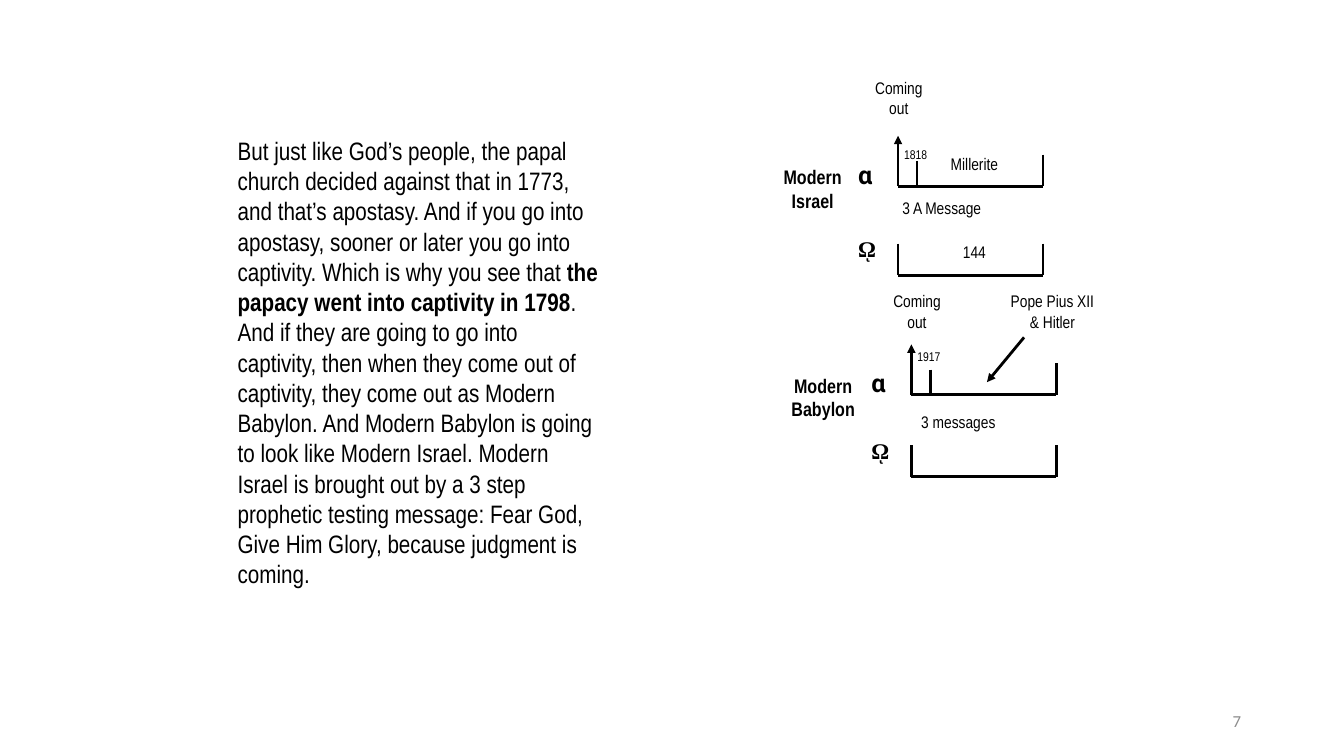
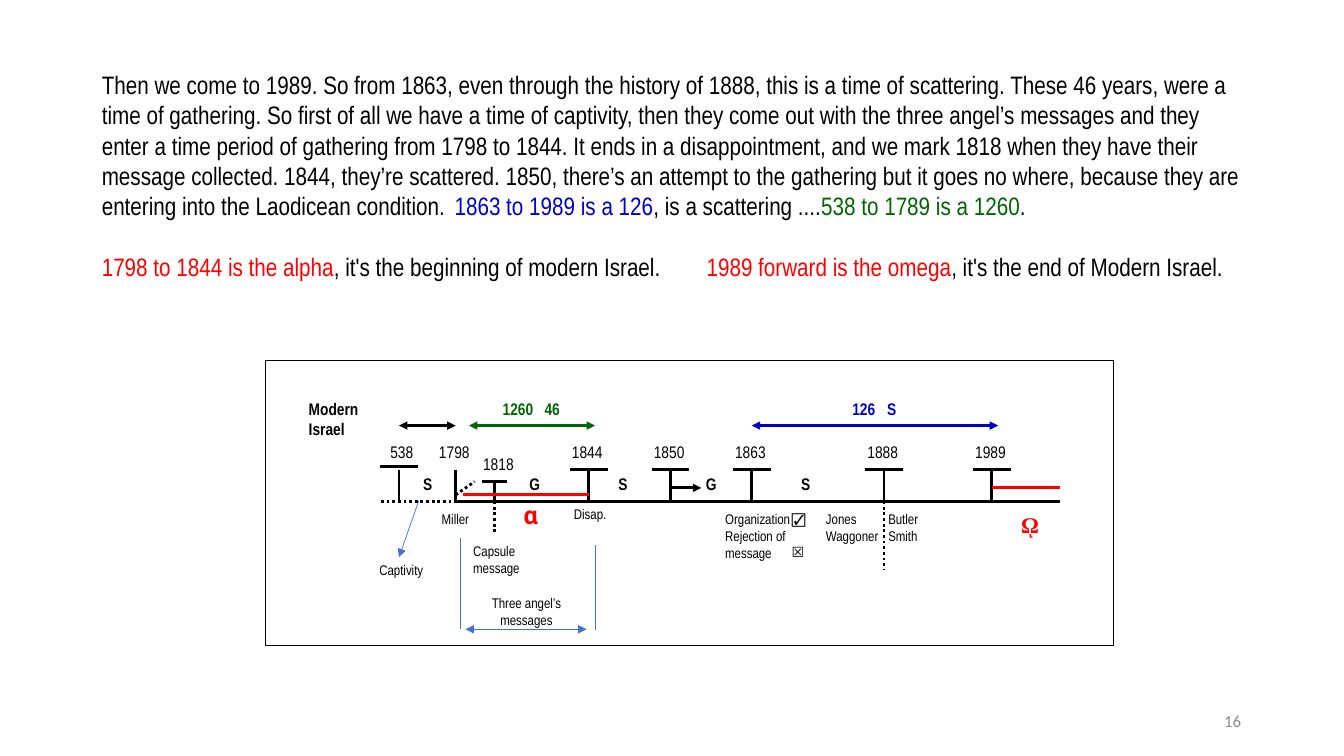
"""Build two slides on the time lines of Modern Israel and Modern Babylon."""
from typing import Any, NamedTuple

import lxml.etree
import pptx
import pptx.dml.color
import pptx.enum.dml
import pptx.enum.shapes
import pptx.enum.text
import pptx.oxml.ns
import pptx.slide
import pptx.util

Pt = pptx.util.Pt
qn = pptx.oxml.ns.qn
ALIGN = pptx.enum.text.PP_ALIGN
INK = {
    "black": "000000",
    "gray": "8C8C8C",
    "red": "FF0000",
    "green": "006600",
    "blue": "0000CC",
    "steel": "4472C4",
}
NARROW = "Arial Narrow"
ALPHA = {"size": 18, "bold": True, "font": "Roboto"}
OMEGA = {"size": 16, "bold": True, "font": "Times New Roman"}
SMALL = {"size": 10}
BASE = 358
TOP = 335.5


class Label(NamedTuple):
    text: str
    x: float
    y: float
    width: float
    align: Any = ALIGN.LEFT
    look: dict[str, Any] = {}
    height: float = 22.5


class Rule(NamedTuple):
    x1: float
    y1: float
    x2: float
    y2: float
    ink: str = "black"
    weight: float = 2
    dots: bool = False
    head: bool = False
    tail: bool = False


class Story(NamedTuple):
    name: str
    mid: float
    x: float
    base: float
    low: float
    year: str
    rise: float


class Post(NamedTuple):
    year: str
    x: float
    half: float = 13.5
    top: float = TOP
    lift: float = 0
    shift: float = -1


class Span(NamedTuple):
    start: float
    end: float
    ink: str
    words: tuple[tuple[str, float], ...] = ()


STORIES = (
    Story("Modern\nIsrael", 580.5, 641.5, 133, 196.5, "1818", 31),
    Story("Modern\nBabylon", 588, 651, 282, 340.5, "1917", 36),
)
NOTES = (
    Label("Millerite", 669, 106.5, 54, ALIGN.CENTER),
    Label("144", 669, 169.5, 54, ALIGN.CENTER),
    Label("Coming out", 615, 52.5, 54, ALIGN.CENTER, height=40),
    Label("Coming out", 628, 205, 54, ALIGN.CENTER, height=40),
    Label("Pope Pius XII\n& Hitler", 718, 205, 67.5, ALIGN.CENTER, height=36),
    Label("3 A Message", 641.5, 138.5, 99),
    Label("3 messages", 655, 291, 99),
)
POSTS = (
    Post("538", 285, lift=2, shift=2),
    Post("1798", 325.5, half=0),
    Post("1818", 353, half=9, top=344, shift=3),
    Post("1844", 420.5),
    Post("1850", 479),
    Post("1863", 537),
    Post("1888", 631.5),
    Post("1989", 708.5),
)
SPANS = (
    Span(285, 325.5, "black"),
    Span(335, 425, "green", (("1260", 370), ("46", 394.5))),
    Span(537, 713, "blue", (("126", 617), ("S", 637))),
)
STATES = (("S", 305.5), ("G", 382), ("S", 445), ("G", 508), ("S", 575.5))
RULES = (
    Rule(325.5, BASE, 757.5, BASE),
    Rule(330.5, BASE, 271.5, BASE, dots=True),
    Rule(325.5, 353.5, 339, 344, dots=True),
    Rule(353, BASE, 353, 380, dots=True),
    Rule(631.5, BASE, 631.5, 407.5, dots=True),
    Rule(479, 348.5, 501, 348.5, tail=True),
    Rule(330.5, 353.5, 420.5, 353.5, "red"),
    Rule(708.5, 348.5, 757.5, 348.5, "red"),
    Rule(299, BASE, 285, 398, "steel", 0.5, tail=True),
    Rule(328.5, 384.5, 328.5, 449.5, "steel", 0.5),
    Rule(425, 389.5, 425, 450, "steel", 0.5),
    Rule(332.5, 449.5, 419, 449.5, "steel", 0.5, head=True, tail=True),
)
EVENTS = (
    Label("Modern\nIsrael", 217.5, 281.5, 46, look={"bold": True}, height=34),
    Label("Miller", 312.5, 362, 32, look=SMALL),
    Label("Disap.", 407, BASE, 45, look=SMALL),
    Label("Captivity", 268, 398, 42, look=SMALL),
    Label("Capsule message", 335, 384.5, 40, look=SMALL, height=36),
    Label("Three angel’s messages", 331, 422, 90, ALIGN.CENTER, SMALL, 36),
    Label("Organization\nRejection of\nmessage", 515, 362, 60, look=SMALL, height=45),
    Label("☑", 562.5, 362, 20, look={"size": 10, "font": "Arial"}),
    Label("☒", 562.5, 385.5, 20, look={"size": 10, "font": "Arial"}),
    Label("Jones\nWaggoner", 587, 362, 45, look=SMALL, height=45),
    Label("Butler\nSmith", 631.5, 362, 45, look=SMALL, height=45),
    Label("α", 371, 353.5, 22.5, look=ALPHA | {"ink": "red"}),
    Label("ῼ", 726.5, 362, 22.5, look=OMEGA | {"ink": "red"}),
)
FALL = [[
    ("But just like God’s people, the papal church decided against that in 1773, and "
     "that’s apostasy. And if you go into apostasy, sooner or later you go into "
     "captivity. Which is why you see that ", {}),
    ("the papacy went into captivity in 1798", {"bold": True}),
    (". And if they are going to go into captivity, then when they come out of "
     "captivity, they come out as Modern Babylon. And Modern Babylon is going to look "
     "like Modern Israel. Modern Israel is brought out by a 3 step prophetic testing "
     "message: Fear God, Give Him Glory, because judgment is coming.", {}),
]]
GATHER = [
    [
        ("Then we come to 1989. So from 1863, even through the history of 1888, this is "
         "a time of scattering. These 46 years, were a time of gathering. So first of "
         "all we have a time of captivity, then they come out with the three angel’s "
         "messages and they enter a time period of gathering from 1798 to 1844. It ends "
         "in a disappointment, and we mark 1818 when they have their message collected. "
         "1844, they’re scattered. 1850, there’s an attempt to the gathering but it "
         "goes no where, because they are entering into the Laodicean condition.\t", {}),
        ("1863 to 1989 is a 126", {"ink": "blue"}),
        (", is a scattering ....", {}),
        ("538 to 1789 is a 1260", {"ink": "green"}),
        (".", {}),
    ],
    [
        ("1798 to 1844 is the alpha", {"ink": "red"}),
        (", it's the beginning of modern Israel.\t", {}),
        ("1989 forward is the omega", {"ink": "red"}),
        (", it's the end of Modern Israel.", {}),
    ],
]


def tint(name: str) -> pptx.dml.color.RGBColor:
    return pptx.dml.color.RGBColor.from_string(INK[name])


def write(para: Any, text: str, *, size: float = 12, bold: bool = False,
          ink: str = "black", font: str = NARROW) -> None:
    run = para.add_run()
    run.text = text
    run.font.size = Pt(size)
    run.font.bold = bold
    run.font.name = font
    run.font.color.rgb = tint(ink)


def tag(slide: pptx.slide.Slide, label: Label) -> None:
    box = slide.shapes.add_textbox(
        Pt(label.x), Pt(label.y), Pt(label.width), Pt(label.height))
    frame = box.text_frame
    frame.word_wrap = True
    frame.margin_left = frame.margin_right = Pt(3)
    frame.margin_top = frame.margin_bottom = Pt(3)
    for row, line in enumerate(label.text.split("\n")):
        para = frame.add_paragraph() if row else frame.paragraphs[0]
        para.alignment = label.align
        write(para, line, **label.look)


def center(slide: pptx.slide.Slide, text: str, mid: float, y: float,
           width: float = 36, **look: Any) -> None:
    tag(slide, Label(text, mid - width / 2, y, width, ALIGN.CENTER, look))


def draw(slide: pptx.slide.Slide, rule: Rule) -> None:
    line = slide.shapes.add_connector(
        pptx.enum.shapes.MSO_CONNECTOR.STRAIGHT,
        Pt(rule.x1), Pt(rule.y1), Pt(rule.x2), Pt(rule.y2))
    line.line.color.rgb = tint(rule.ink)
    line.line.width = Pt(rule.weight)
    if rule.dots:
        line.line.dash_style = pptx.enum.dml.MSO_LINE.ROUND_DOT
    edge = line.line._get_or_add_ln()
    for name, shown in (("a:headEnd", rule.head), ("a:tailEnd", rule.tail)):
        if shown:
            lxml.etree.SubElement(edge, qn(name), type="triangle")
    lxml.etree.SubElement(line._element.spPr, qn("a:effectLst"))


def page(deck: Any, number: int, paras: list, place: tuple[float, ...],
         stops: tuple[float, ...] = ()) -> pptx.slide.Slide:
    slide = deck.slides.add_slide(deck.slide_layouts[1])
    title = slide.shapes.title._element
    title.getparent().remove(title)
    body = slide.placeholders[1]
    body.left, body.top, body.width, body.height = map(Pt, place)
    frame = body.text_frame
    frame.auto_size = pptx.enum.text.MSO_AUTO_SIZE.NONE
    for row, runs in enumerate(paras):
        para = frame.add_paragraph() if row else frame.paragraphs[0]
        para.space_before = Pt(21.6 if row else 0)
        props = para._p.get_or_add_pPr()
        props.set("marL", "0")
        props.set("indent", "0")
        lxml.etree.SubElement(props, qn("a:buNone"))
        if stops:
            tabs = lxml.etree.SubElement(props, qn("a:tabLst"))
            lxml.etree.SubElement(
                tabs, qn("a:tab"), pos=str(int(Pt(stops[row]))), algn="l")
        for text, look in runs:
            write(para, text, size=18, **look)
    tag(slide, Label(str(number), 678, 504.5, 211.5, ALIGN.RIGHT,
                     {"font": "Calibri", "ink": "gray"}))
    return slide


def cup(slide: pptx.slide.Slide, x: float, base: float) -> None:
    end = x + 103.5
    draw(slide, Rule(x, base, end, base))
    for side in (x, end):
        draw(slide, Rule(side, base - 22.5, side, base))


def tell(slide: pptx.slide.Slide, story: Story) -> None:
    x, base = story.x, story.base
    cup(slide, x, base)
    cup(slide, x, story.low)
    draw(slide, Rule(x, base - 22.5, x, base - 36, tail=True))
    draw(slide, Rule(x + 13.5, base - 18, x + 13.5, base))
    center(slide, story.name, story.mid, base - 18, 54, size=14, bold=True)
    center(slide, story.year, x + 12.5, base - story.rise, 25, size=9)
    tag(slide, Label("α", x - 31.5, base - 22.5, 22.5, look=ALPHA))
    tag(slide, Label("ῼ", x - 31.5, story.low - 31.5, 22.5, look=OMEGA))


def mark(slide: pptx.slide.Slide, post: Post) -> None:
    draw(slide, Rule(post.x, post.top, post.x, BASE))
    if post.half:
        cap = post.top - post.lift
        draw(slide, Rule(post.x - post.half, cap, post.x + post.half, cap))
    center(slide, post.year, post.x + post.shift, post.top - 23)


def chart(slide: pptx.slide.Slide) -> None:
    frame = slide.shapes.add_shape(
        pptx.enum.shapes.MSO_SHAPE.RECTANGLE, Pt(189.5), Pt(257), Pt(606), Pt(204))
    frame.shadow.inherit = False
    frame.fill.background()
    frame.line.color.rgb = tint("black")
    frame.line.width = Pt(0.25)
    for post in POSTS:
        mark(slide, post)
    for rule in RULES:
        draw(slide, rule)
    for span in SPANS:
        draw(slide, Rule(span.start, 304, span.end, 304, span.ink,
                         head=True, tail=True))
        for word, mid in span.words:
            center(slide, word, mid, 281.5, bold=True, ink=span.ink)
    for state, mid in STATES:
        center(slide, state, mid, TOP, 22.5, bold=True)
    for event in EVENTS:
        tag(slide, event)


def main() -> None:
    deck = pptx.Presentation()
    deck.slide_width, deck.slide_height = Pt(960), Pt(540)
    first = page(deck, 7, FALL, (162.5, 93, 275, 356.5))
    for story in STORIES:
        tell(first, story)
    for note in NOTES:
        tag(first, note)
    draw(first, Rule(731.5, 241, 705, 273, tail=True))
    chart(page(deck, 16, GATHER, (65.5, 46, 833, 160), (258, 412)))
    deck.save("out.pptx")


if __name__ == "__main__":
    main()
